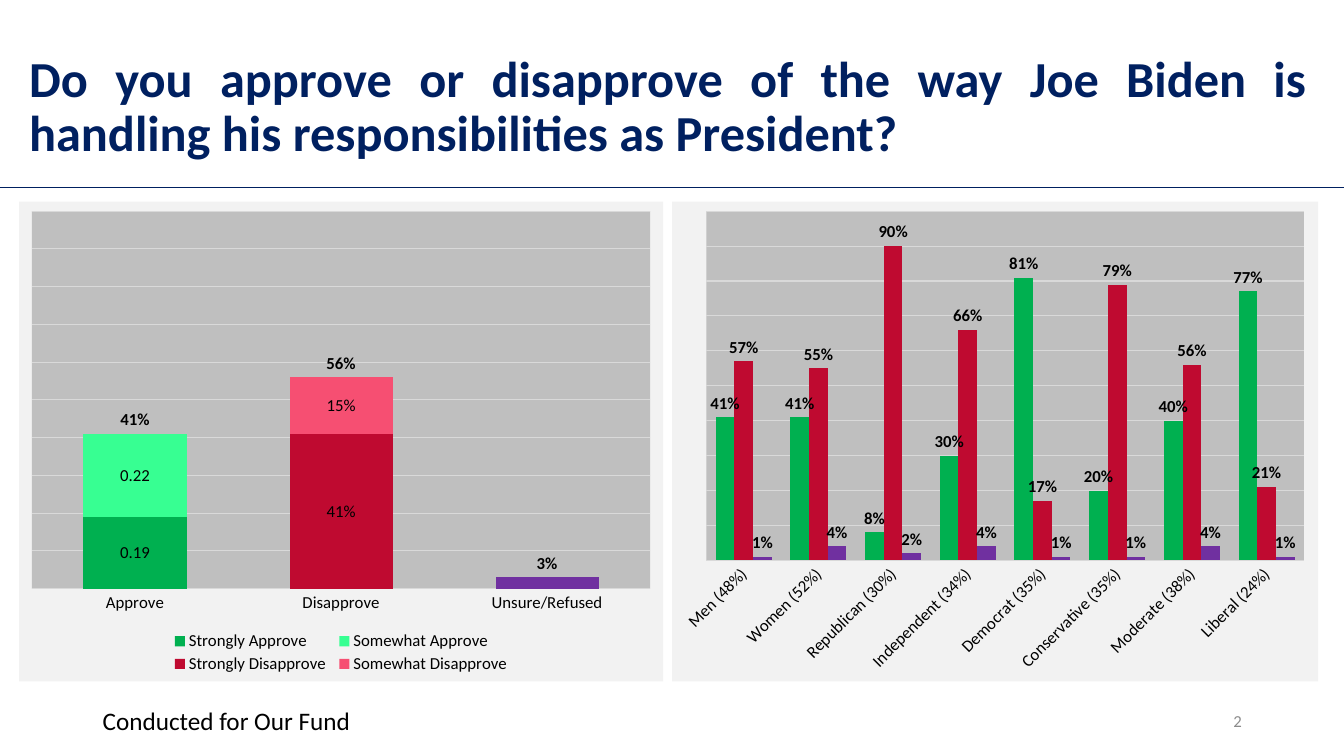
import pptx
import pptx.chart.data
import pptx.dml.color
import pptx.enum.chart
import pptx.enum.shapes
import pptx.enum.text
import pptx.oxml
import pptx.oxml.ns
import pptx.util
from pptx.util import Cm

RGB = pptx.dml.color.RGBColor
NAVY = RGB(0x00, 0x20, 0x60)
BLACK = RGB(0x00, 0x00, 0x00)
MUTED = RGB(0x8C, 0x8C, 0x8C)
PALE = RGB(0xF2, 0xF2, 0xF2)
SILVER = RGB(0xBF, 0xBF, 0xBF)
RULE = RGB(0xD9, 0xD9, 0xD9)
GREEN = RGB(0x00, 0xB0, 0x50)
MINT = RGB(0x37, 0xFF, 0x92)
RED = RGB(0xBF, 0x0A, 0x30)
ROSE = RGB(0xF6, 0x4F, 0x72)
PURPLE = RGB(0x70, 0x30, 0xA0)

KIND = pptx.enum.chart.XL_CHART_TYPE
SPOT = pptx.enum.chart.XL_LABEL_POSITION
ALIGN = pptx.enum.text.PP_ALIGN
MIDDLE = pptx.enum.text.MSO_ANCHOR.MIDDLE
TOP = pptx.enum.text.MSO_ANCHOR.TOP
qn = pptx.oxml.ns.qn
SPACES = pptx.oxml.ns.nsdecls("c", "a")


def assign(target, values):
    for key, value in values.items():
        setattr(target, key, value)


def style(font, size, color=BLACK, bold=False):
    assign(font, {"name": "Calibri", "size": pptx.util.Pt(size), "bold": bold})
    font.color.rgb = color


def place(shape, box):
    sides = ("left", "top", "width", "height")
    assign(shape, dict(zip(sides, map(Cm, box))))


def write(shape, text, size, color, align, anchor, bold=False):
    frame = shape.text_frame
    assign(frame, {"text": text, "word_wrap": True, "vertical_anchor": anchor,
                   "auto_size": pptx.enum.text.MSO_AUTO_SIZE.NONE})
    para = frame.paragraphs[0]
    para.alignment = align
    style(para.runs[0].font, size, color, bold)
    return para


def label(slide, box, *words):
    write(slide.shapes.add_textbox(*map(Cm, box)), *words)


def divide(slide, top, width):
    straight = pptx.enum.shapes.MSO_CONNECTOR.STRAIGHT
    line = slide.shapes.add_connector(straight, 0, Cm(top), width, Cm(top))
    line.line.color.rgb = NAVY
    line.line.width = pptx.util.Pt(0.5)
    line._element.spPr.append(
        pptx.oxml.parse_xml(f"<a:effectLst {SPACES}/>"))


def panel(color):
    return pptx.oxml.parse_xml(
        f'<c:spPr {SPACES}><a:solidFill><a:srgbClr val="{color}"/>'
        "</a:solidFill><a:ln><a:noFill/></a:ln></c:spPr>")


def layout(parent, box, inner=False):
    """Make a layout element from fractions of the chart area."""
    for old in parent.findall(qn("c:layout")):
        parent.remove(old)
    target = '<c:layoutTarget val="inner"/>' if inner else ""
    modes = '<c:xMode val="edge"/><c:yMode val="edge"/>'
    sizes = "".join(f'<c:{k} val="{v}"/>' for k, v in zip("xywh", box))
    return pptx.oxml.parse_xml(
        f"<c:layout {SPACES}><c:manualLayout>{target}{modes}{sizes}"
        "</c:manualLayout></c:layout>")


def tag(series, spot, form, bold):
    labels = series.data_labels
    assign(labels, {"show_value": True, "position": spot,
                    "number_format": form, "number_format_is_linked": False})
    style(labels.font, 12, BLACK, bold)


def graph(slide, box, kind, names, rows, plot_box, overlap=0):
    """Rows hold name, values, fill and label format of each series."""
    data = pptx.chart.data.CategoryChartData(number_format="General")
    data.categories = names
    for name, values, *rest in rows:
        data.add_series(name, values)
    chart = slide.shapes.add_chart(kind, *map(Cm, box), data).chart
    assign(chart, {"has_title": False, "has_legend": False})
    style(chart.font, 10)

    # Axes
    assign(chart.value_axis, {"minimum_scale": 0, "maximum_scale": 1,
                              "major_unit": 0.1, "visible": False,
                              "has_major_gridlines": True})
    axis = chart.category_axis
    axis.major_tick_mark = pptx.enum.chart.XL_TICK_MARK.NONE
    style(axis.tick_labels.font, 12)
    for part in (axis.format, chart.value_axis.major_gridlines.format):
        part.line.color.rgb = RULE
        part.line.width = pptx.util.Pt(0.75)

    # Columns and their labels
    plot = chart.plots[0]
    assign(plot, {"gap_width": 100, "overlap": overlap,
                  "vary_by_categories": False})
    for series, (name, values, color, mark) in zip(plot.series, rows):
        series.invert_if_negative = False
        if color is None:
            series.format.fill.background()
        else:
            series.format.fill.solid()
            series.format.fill.fore_color.rgb = color
        if mark:
            tag(series, *mark)

    # Chart and plot backgrounds
    root = chart._chartSpace
    root.find(qn("c:txPr")).addprevious(panel(PALE))
    area = root.chart.plotArea
    area.insert(0, layout(area, plot_box, inner=True))
    area.append(panel(SILVER))
    return chart


def key(chart, box, hidden):
    chart.has_legend = True
    legend = chart.legend
    assign(legend, {"position": pptx.enum.chart.XL_LEGEND_POSITION.BOTTOM,
                    "include_in_layout": False})
    style(legend.font, 12)
    node = legend._element
    spot = layout(node, box)
    node.find(qn("c:overlay")).addprevious(spot)
    for index in hidden:
        spot.addprevious(pptx.oxml.parse_xml(
            f'<c:legendEntry {SPACES}><c:idx val="{index}"/>'
            '<c:delete val="1"/></c:legendEntry>'))


def main():
    deck = pptx.Presentation()
    assign(deck, {"slide_width": Cm(33.87), "slide_height": Cm(19.05)})
    slide = deck.slides.add_slide(deck.slide_layouts[5])

    # Title and rule
    title = slide.shapes.title
    place(title, (0.48, 0.89, 32.72, 3.68))
    para = write(title, "Do you approve or disapprove of the way Joe Biden is "
                 "handling his responsibilities as President?",
                 36, NAVY, ALIGN.JUSTIFY, MIDDLE, True)
    para.line_spacing = 0.9
    divide(slide, 4.72, deck.slide_width)

    # Footer
    label(slide, (23.93, 17.65, 7.62, 1.02), "2", 12, MUTED,
          ALIGN.RIGHT, MIDDLE)
    label(slide, (2.34, 17.65, 7.62, 1.02), "Conducted for Our Fund", 18, BLACK,
          ALIGN.LEFT, TOP)

    # Results by group
    above = (SPOT.OUTSIDE_END, "0%", True)
    groups = ("Men (48%)", "Women (52%)", "Republican (30%)",
              "Independent (34%)", "Democrat (35%)", "Conservative (35%)",
              "Moderate (38%)", "Liberal (24%)")
    chart = graph(slide, (16.94, 5.08, 16.28, 12.09), KIND.COLUMN_CLUSTERED,
                  groups, (
        ("Series 1", (0.41, 0.41, 0.08, 0.3, 0.81, 0.2, 0.4, 0.77),
         GREEN, above),
        ("Series 2", (0.57, 0.55, 0.9, 0.66, 0.17, 0.79, 0.56, 0.21),
         RED, above),
        ("Series 3", (0.01, 0.04, 0.02, 0.04, 0.01, 0.01, 0.04, 0.01),
         PURPLE, above)), (0.053, 0.02, 0.925, 0.728))
    text = chart.category_axis._element.find(qn("c:txPr"))
    text.find(qn("a:bodyPr")).set("rot", "-2700000")

    # Overall results, with a clear series that carries the totals
    plain = (SPOT.CENTER, "General", False)
    share = (SPOT.CENTER, "0%", False)
    total = (SPOT.INSIDE_BASE, "0%", True)
    chart = graph(slide, (0.48, 5.08, 16.23, 12.09), KIND.COLUMN_STACKED,
                  ("Approve", "Disapprove", "Unsure/Refused"), (
        ("Strongly Approve", (0.19, None, None), GREEN, plain),
        ("Somewhat Approve", (0.22, None, None), MINT, plain),
        ("Strongly Disapprove", (None, 0.41, None), RED, share),
        ("Somewhat Disapprove", (None, 0.15, None), ROSE, share),
        ("Series 5", (None, None, 0.03), PURPLE, None),
        ("Series 6", (0.41, 0.56, 0.03), None, total)),
        (0.02, 0.02, 0.96, 0.787), overlap=100)
    key(chart, (0.23, 0.89, 0.54, 0.1), (4, 5))

    deck.save("out.pptx")


if __name__ == "__main__":
    main()
